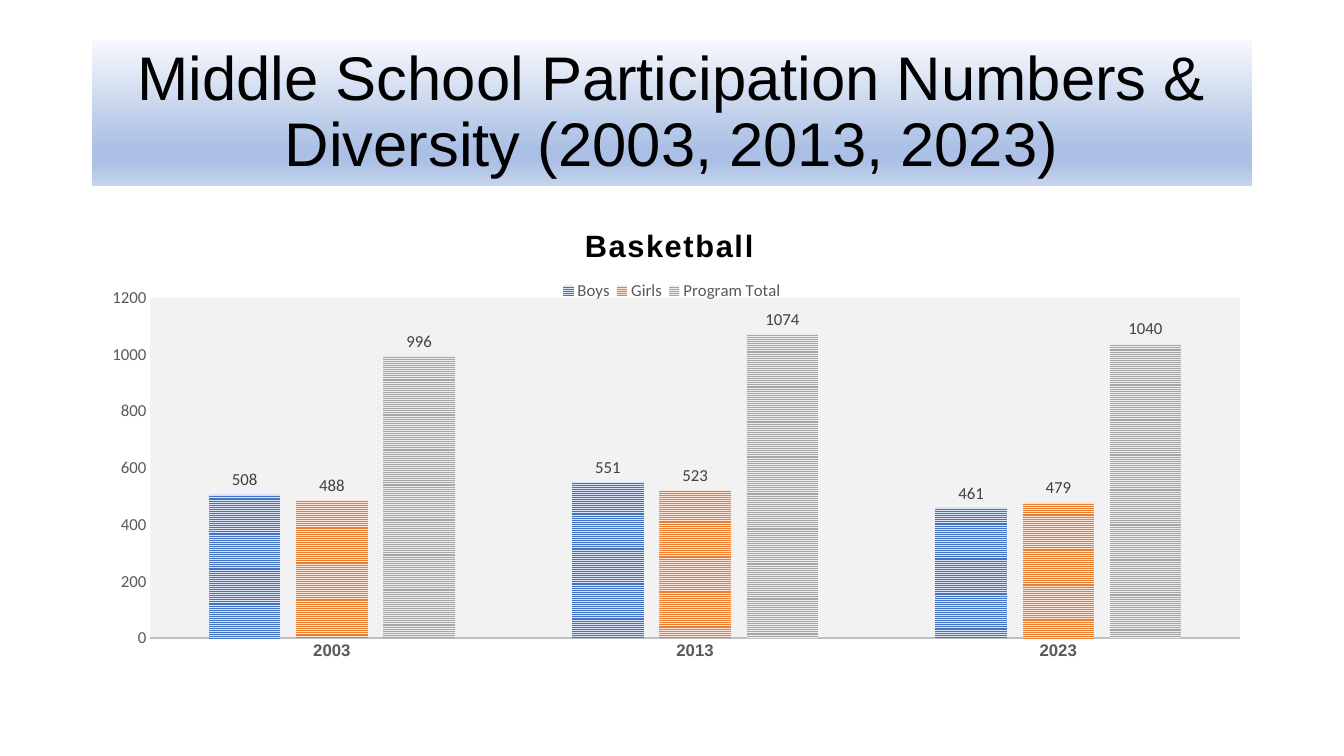
from dataclasses import dataclass

from lxml.etree import SubElement
from pptx import Presentation
from pptx.chart.data import CategoryChartData
from pptx.dml.color import RGBColor
from pptx.enum.chart import XL_CHART_TYPE as ChartType
from pptx.enum.chart import XL_LABEL_POSITION as LabelPosition
from pptx.enum.chart import XL_LEGEND_POSITION as LegendPosition
from pptx.enum.chart import XL_TICK_MARK as TickMark
from pptx.enum.dml import MSO_PATTERN as Pattern
from pptx.enum.text import MSO_ANCHOR as Anchor
from pptx.enum.text import MSO_AUTO_SIZE as AutoSize
from pptx.enum.text import PP_ALIGN as Align
from pptx.oxml import parse_xml
from pptx.oxml.ns import nsdecls, qn
from pptx.util import Pt


@dataclass(frozen=True)
class Theme:
    """Colours, fonts and type sizes of the slide."""

    heading_font: str = "Arial"
    body_font: str = "Calibri"
    heading_size: int = 44
    chart_title_size: int = 22
    label_size: int = 12
    black: str = "000000"
    axis_text: str = "595959"
    label_text: str = "404040"
    axis_line: str = "BFBFBF"
    plot_fill: str = "F2F2F2"
    banner: tuple = ((0, "F6F8FC"), (74, "ABC0E4"), (83, "ABC0E4"), (100, "C7D5ED"))


THEME = Theme()
YEARS = ("2003", "2013", "2023")
PARTICIPATION = (
    ("Boys", (508, 551, 461), "4472C4", "DAE3F3"),
    ("Girls", (488, 523, 479), "ED7D31", "FBE5D6"),
    ("Program Total", (996, 1074, 1040), "A5A5A5", "EDEDED"),
)


def style_font(font, size=THEME.label_size, color=THEME.axis_text,
               name=THEME.body_font, bold=False):
    """Apply a face, size, colour and weight to a font."""
    font.name, font.size, font.bold = name, Pt(size), bold
    font.color.rgb = RGBColor.from_string(color)


def write_text(text_frame, text, align=Align.CENTER, line_spacing=None, **font_format):
    """Write one formatted paragraph and return its run."""
    paragraph = text_frame.paragraphs[0]
    paragraph.alignment = align
    paragraph.line_spacing = line_spacing
    run = paragraph.add_run()
    run.text = text
    style_font(run.font, **font_format)
    return run


def place_part(element, index, x, y, width=None, height=None, inner=False):
    """Give a chart part a manual layout in fractions of the chart."""
    for old_layout in element.findall(qn("c:layout")):
        element.remove(old_layout)
    layout = parse_xml(f"<c:layout {nsdecls('c')}/>")
    manual = SubElement(layout, qn("c:manualLayout"))
    settings = [("layoutTarget", "inner")] if inner else []
    settings += [("xMode", "edge"), ("yMode", "edge"), ("x", x), ("y", y)]
    if width is not None:
        settings += [("w", width), ("h", height)]
    for tag, value in settings:
        SubElement(manual, qn(f"c:{tag}")).set("val", str(value))
    element.insert(index, layout)


def add_banner(slide, left, top, width, height):
    """Format the title placeholder as a gradient banner."""
    title = slide.shapes.title
    title.left, title.top, title.width, title.height = left, top, width, height
    title.fill.gradient()
    title.fill.gradient_angle = 270
    stops = title.element.spPr.find(qn("a:gradFill")).find(qn("a:gsLst"))
    for stop in list(stops):
        stops.remove(stop)
    for position, color in THEME.banner:
        stop = SubElement(stops, qn("a:gs"), pos=str(position * 1000))
        SubElement(stop, qn("a:srgbClr"), val=color)
    frame = title.text_frame
    frame.word_wrap = True
    frame.auto_size = AutoSize.NONE
    frame.vertical_anchor = Anchor.MIDDLE
    write_text(frame, "Middle School Participation Numbers & Diversity (2003, 2013, 2023)",
               line_spacing=0.9, size=THEME.heading_size, color=THEME.black,
               name=THEME.heading_font)


def format_axes(chart):
    """Style the year axis and the value axis."""
    years, values = chart.category_axis, chart.value_axis
    for axis in (years, values):
        axis.major_tick_mark = axis.minor_tick_mark = TickMark.NONE
        axis.has_major_gridlines = False
    style_font(years.tick_labels.font, name=THEME.heading_font, bold=True)
    years.format.line.color.rgb = RGBColor.from_string(THEME.axis_line)
    years.format.line.width = Pt(1.5)
    style_font(values.tick_labels.font)
    values.format.line.fill.background()
    values.minimum_scale, values.maximum_scale, values.major_unit = 0, 1200, 200


def format_series(series, foreground, background):
    """Give a series its striped fill and value labels."""
    fill = series.format.fill
    fill.patterned()
    fill.pattern = Pattern.NARROW_HORIZONTAL
    fill.fore_color.rgb = RGBColor.from_string(foreground)
    fill.back_color.rgb = RGBColor.from_string(background)
    labels = series.data_labels
    labels.show_value = True
    labels.position = LabelPosition.OUTSIDE_END
    style_font(labels.font, color=THEME.label_text)


def add_participation_chart(slide, left, top, width, height):
    """Add the clustered column chart of basketball participation."""
    data = CategoryChartData()
    data.categories = YEARS
    for name, values, *_ in PARTICIPATION:
        data.add_series(name, values)
    chart = slide.shapes.add_chart(
        ChartType.COLUMN_CLUSTERED, left, top, width, height, data).chart
    style_font(chart.font, size=10, color=THEME.black)

    chart.has_title = True
    run = write_text(chart.chart_title.text_frame, "Basketball", bold=True,
                     size=THEME.chart_title_size, color=THEME.black,
                     name=THEME.heading_font)
    run.font._element.set("spc", "130")
    place_part(chart.chart_title._element, 1, 0.42, 0.04)

    chart.has_legend = True
    chart.legend.position = LegendPosition.TOP
    chart.legend.include_in_layout = False
    style_font(chart.legend.font)
    place_part(chart.legend._element, 1, 0.4, 0.16, 0.2, 0.05)

    format_axes(chart)
    plot = chart.plots[0]
    plot.gap_width, plot.overlap, plot.vary_by_categories = 164, -22, False
    for series, (_, _, foreground, background) in zip(plot.series, PARTICIPATION):
        format_series(series, foreground, background)

    plot_area = chart._chartSpace.chart.plotArea
    place_part(plot_area, 0, 0.05, 0.2, 0.94, 0.71, inner=True)
    properties = SubElement(plot_area, qn("c:spPr"))
    solid = SubElement(properties, qn("a:solidFill"))
    SubElement(solid, qn("a:srgbClr"), val=THEME.plot_fill)


def main():
    """Build and save the participation slide."""
    presentation = Presentation()
    presentation.slide_width, presentation.slide_height = Pt(960), Pt(540)
    slide = presentation.slides.add_slide(presentation.slide_layouts[5])
    left, width = Pt(66), Pt(828)
    add_banner(slide, left, Pt(28.75), width, Pt(104.4))
    add_participation_chart(slide, left, Pt(144), width, Pt(342.7))
    presentation.save("out.pptx")


if __name__ == "__main__":
    main()
